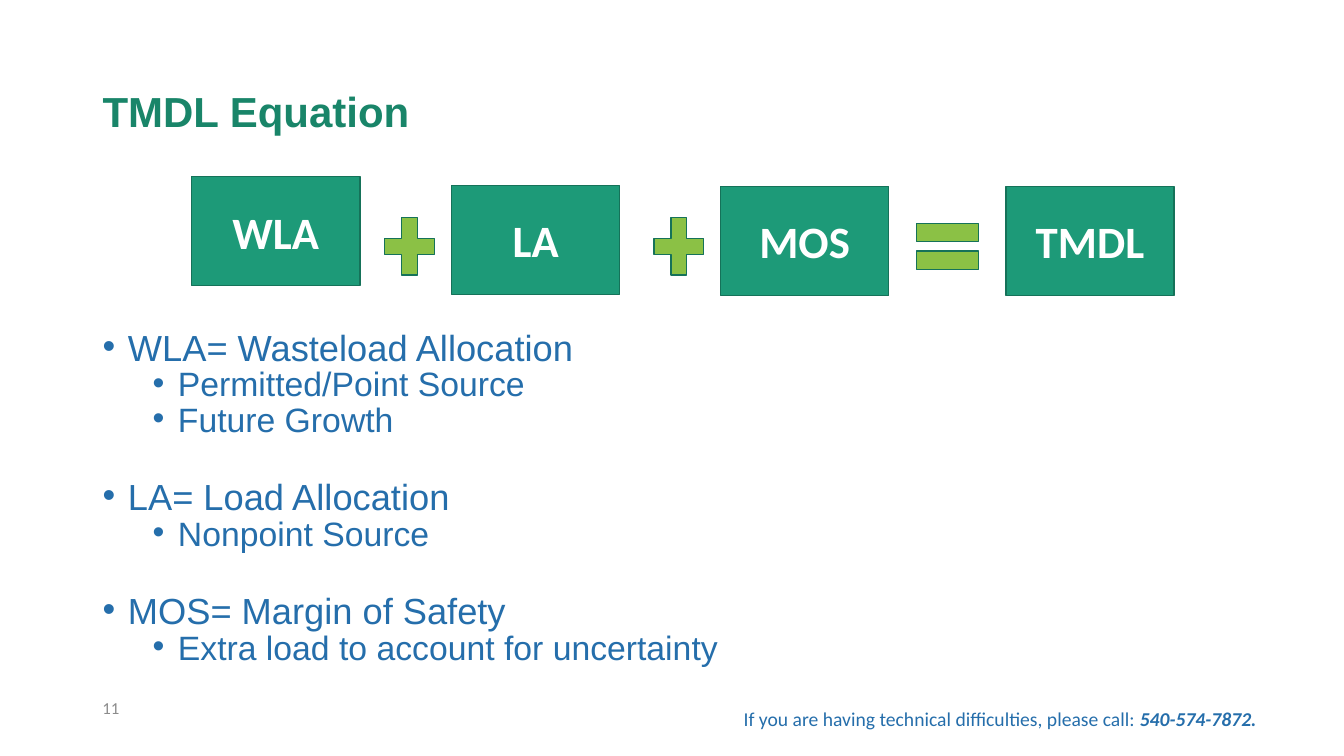
import pptx
import pptx.util
import pptx.dml.color
import pptx.enum.shapes
import pptx.enum.text
from lxml import etree

Cm, Pt = pptx.util.Cm, pptx.util.Pt
SHAPE = pptx.enum.shapes.MSO_SHAPE
ALIGN = pptx.enum.text.PP_ALIGN
ANCHOR = pptx.enum.text.MSO_ANCHOR
FIT = pptx.enum.text.MSO_AUTO_SIZE

COLORS = {
    "title": "198569", "body": "256EAB", "number": "8C8C8C", "white": "FFFFFF",
    "term": "1D9A78", "sign": "8BC145", "outline": "157259",
}

# left and top in cm
TERMS = [("WLA", 4.83, 4.45), ("LA", 11.38, 4.67),
         ("MOS", 18.16, 4.7), ("TMDL", 25.35, 4.7)]
# preset, left and width in cm
SIGNS = [(SHAPE.MATH_PLUS, 9.47, 1.7), (SHAPE.MATH_PLUS, 16.26, 1.7),
         (SHAPE.MATH_EQUAL, 22.81, 2.13)]
DEFINITIONS = [
    ("WLA= Wasteload Allocation", ["Permitted/Point Source", "Future Growth"]),
    ("LA= Load Allocation", ["Nonpoint Source"]),
    ("MOS= Margin of Safety", ["Extra load to account for uncertainty"]),
]


def rgb(name):
    return pptx.dml.color.RGBColor.from_string(COLORS[name])


def apply(target, values):
    for name, value in values.items():
        setattr(target, name, value)


def place(shape, left, top, width, height):
    apply(shape, {"left": Cm(left), "top": Cm(top),
                  "width": Cm(width), "height": Cm(height)})


def add_span(para, text, color, **values):
    span = para.add_run()
    span.text = text
    apply(span.font, values)
    span.font.color.rgb = rgb(color)


def add_bullet(para, left, hanging):
    properties = para._p.get_or_add_pPr()
    properties.set("marL", str(Cm(left)))
    properties.set("indent", str(-Cm(hanging)))
    namespace = properties.nsmap["a"]
    font = etree.SubElement(properties, f"{{{namespace}}}buFont")
    font.set("typeface", "Arial")
    mark = etree.SubElement(properties, f"{{{namespace}}}buChar")
    mark.set("char", "•")


def fill_title(title):
    place(title, 2.33, 1.02, 29.21, 3.68)
    apply(title.text_frame, {"vertical_anchor": ANCHOR.MIDDLE, "auto_size": FIT.NONE})
    para = title.text_frame.paragraphs[0]
    apply(para, {"alignment": ALIGN.LEFT, "line_spacing": 0.9})
    add_span(para, "TMDL Equation", "title", name="Arial", size=Pt(30), bold=True)


def fill_definitions(body):
    place(body, 2.33, 8.36, 29.21, 9.45)
    frame = body.text_frame
    frame.auto_size = FIT.NONE
    for index, (term, details) in enumerate(DEFINITIONS):
        for level, text in [(0, term)] + [(1, detail) for detail in details]:
            first = index == 0 and level == 0
            para = frame.paragraphs[0] if first else frame.add_paragraph()
            add_bullet(para, 1.9 if level else 0.64, 0.64)
            before = 0 if first else 5 if level else 34.5
            apply(para, {"level": level, "line_spacing": 0.7,
                         "space_before": Pt(before), "space_after": Pt(0)})
            add_span(para, text, "body", name="Arial", size=Pt(24.1 if level else 25.9))


def add_block(page, preset, area, color, text=""):
    shape = page.shapes.add_shape(preset, *(Cm(length) for length in area))
    shape.shadow.inherit = False
    shape.fill.solid()
    shape.fill.fore_color.rgb = rgb(color)
    shape.line.color.rgb = rgb("outline")
    shape.line.width = Pt(1)
    if text:
        shape.text_frame.vertical_anchor = ANCHOR.MIDDLE
        para = shape.text_frame.paragraphs[0]
        para.alignment = ALIGN.CENTER
        add_span(para, text, "white", name="Calibri", size=Pt(32), bold=True)


def add_note(page, area):
    box = page.shapes.add_textbox(*(Cm(length) for length in area))
    box.text_frame.word_wrap = True
    return box.text_frame.paragraphs[0]


def main():
    deck = pptx.Presentation()
    apply(deck, {"slide_width": Cm(33.87), "slide_height": Cm(19.05)})
    page = deck.slides.add_slide(deck.slide_layouts[1])

    # Title and definitions
    fill_title(page.shapes.title)
    fill_definitions(page.placeholders[1])

    # Equation
    for text, left, top in TERMS:
        add_block(page, SHAPE.RECTANGLE, (left, top, 4.24, 2.75), "term", text)
    for preset, left, width in SIGNS:
        add_block(page, preset, (left, 5.23, width, 1.96), "sign")

    # Page number and help line
    number = add_note(page, (2.33, 17.45, 3, 0.8))
    add_span(number, "11", "number", name="Calibri", size=Pt(12))
    contact = add_note(page, (18.49, 17.7, 13.46, 0.86))
    style = {"name": "Calibri", "size": Pt(14)}
    add_span(contact, "If you are having technical difficulties, please call: ",
             "body", **style)
    add_span(contact, "540-574-7872.", "body", bold=True, italic=True, **style)

    deck.save("out.pptx")


if __name__ == "__main__":
    main()
